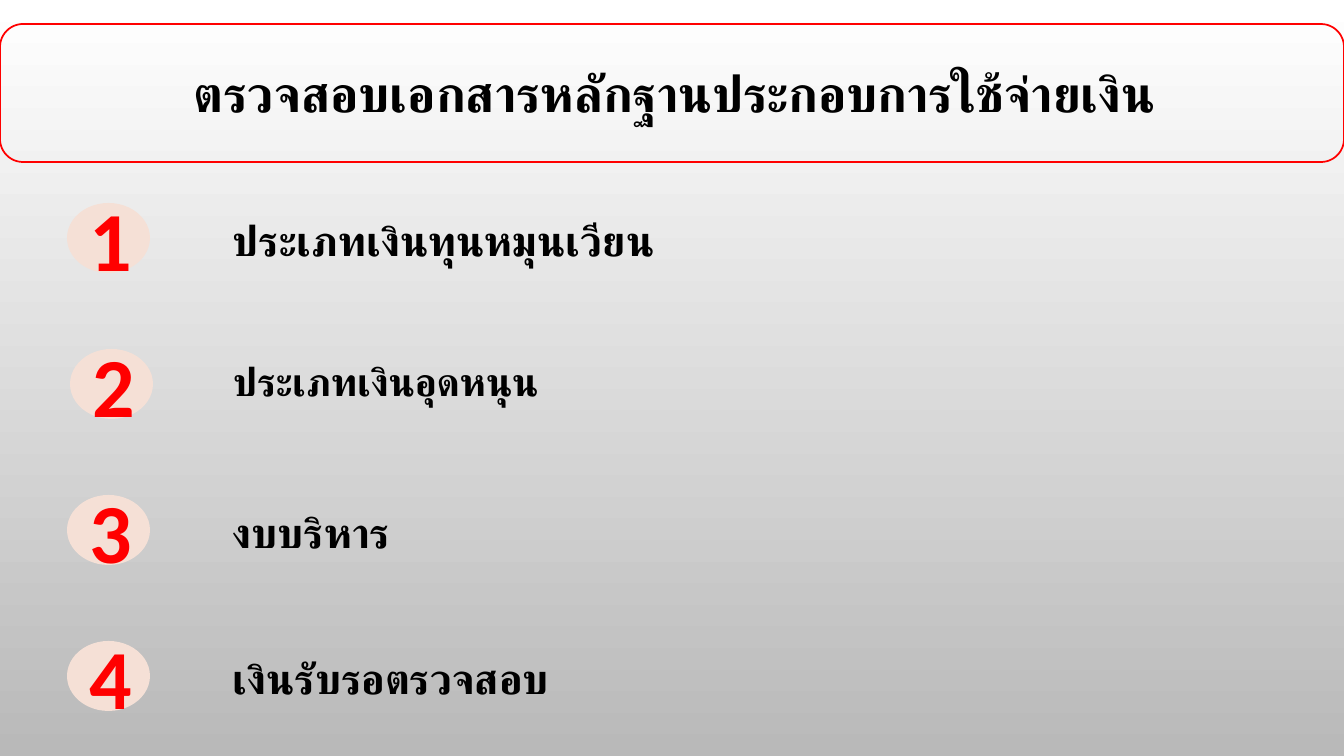
from pptx import Presentation
from pptx.dml.color import RGBColor
from pptx.enum.shapes import MSO_SHAPE as SHAPE
from pptx.enum.text import MSO_ANCHOR as ANCHOR, MSO_AUTO_SIZE as AUTO, PP_ALIGN as ALIGN
from pptx.util import Emu, Pt

SLIDE_W, SLIDE_H = 1344, 756
EMU_PER_PX = 12192000 / SLIDE_W
FONT = "Calibri"

BLACK = RGBColor(0x00, 0x00, 0x00)
WHITE = RGBColor(0xFF, 0xFF, 0xFF)
GREY = RGBColor(0xB9, 0xB9, 0xB9)
RED = RGBColor(0xFF, 0x00, 0x00)
PEACH = RGBColor(0xF5, 0xE0, 0xD6)

TITLE = "ตรวจสอบเอกสารหลักฐานประกอบการใช้จ่ายเงิน"
# Text, font size, badge left, text offset below the badge top
ITEMS = [
    ("ประเภทเงินทุนหมุนเวียน", 30, 67, 7),
    ("ประเภทเงินอุดหนุน", 28, 70, 3),
    ("งบบริหาร", 30, 67, 7),
    ("เงินรับรอตรวจสอบ", 30, 67, 7),
]


def px(n):
    return Emu(round(n * EMU_PER_PX))


def box(*lengths):
    return [px(n) for n in lengths]


def write(shape, text, size, color, align, anchor=ANCHOR.TOP):
    tf = shape.text_frame
    tf.word_wrap = True
    tf.auto_size = AUTO.NONE
    tf.vertical_anchor = anchor
    tf.text = text
    p = tf.paragraphs[0]
    p.alignment = align
    p.line_spacing = 1.0
    font = p.runs[0].font
    font.name, font.size, font.bold = FONT, Pt(size), True
    font.color.rgb = color


def paint_background(s):
    fill = s.background.fill
    fill.gradient()
    fill.gradient_angle = 270
    for stop, color, position in zip(fill.gradient_stops, (WHITE, GREY), (0, 1)):
        stop.color.rgb = color
        stop.position = position


def add_header(s, left, top, width, height):
    # Outlined frame
    frame = s.shapes.add_shape(SHAPE.ROUNDED_RECTANGLE, *box(left, top, width, height))
    frame.shadow.inherit = False
    frame.fill.background()
    frame.line.color.rgb = RED
    frame.line.width = Pt(1.25)

    # Title inside the frame
    title = s.shapes.title
    title.left, title.top, title.width, title.height = box(left + 44, top + 33, 1261, 72)
    write(title, TITLE, 36, BLACK, ALIGN.CENTER)


def add_item(s, number, text, size, left, top, text_left, text_top):
    # Numbered badge
    badge = s.shapes.add_shape(SHAPE.OVAL, *box(left, top, 83, 70))
    badge.shadow.inherit = False
    badge.fill.solid()
    badge.fill.fore_color.rgb = PEACH
    badge.line.fill.background()
    write(badge, str(number), 60, RED, ALIGN.CENTER, ANCHOR.MIDDLE)

    # Item text
    label = s.shapes.add_textbox(*box(text_left, text_top, 1083, 61))
    write(label, text, size, BLACK, ALIGN.LEFT)


def add_list(s, text_left, top, pitch):
    for i, (text, size, badge_left, offset) in enumerate(ITEMS):
        row_top = top + i * pitch
        add_item(s, i + 1, text, size, badge_left, row_top, text_left, row_top + offset)


def main():
    prs = Presentation()
    prs.slide_width, prs.slide_height = box(SLIDE_W, SLIDE_H)
    s = prs.slides.add_slide(prs.slide_layouts[5])
    paint_background(s)
    add_header(s, 0, 24, SLIDE_W, 138)
    add_list(s, 223, 203, 146)
    prs.save("out.pptx")


if __name__ == "__main__":
    main()
